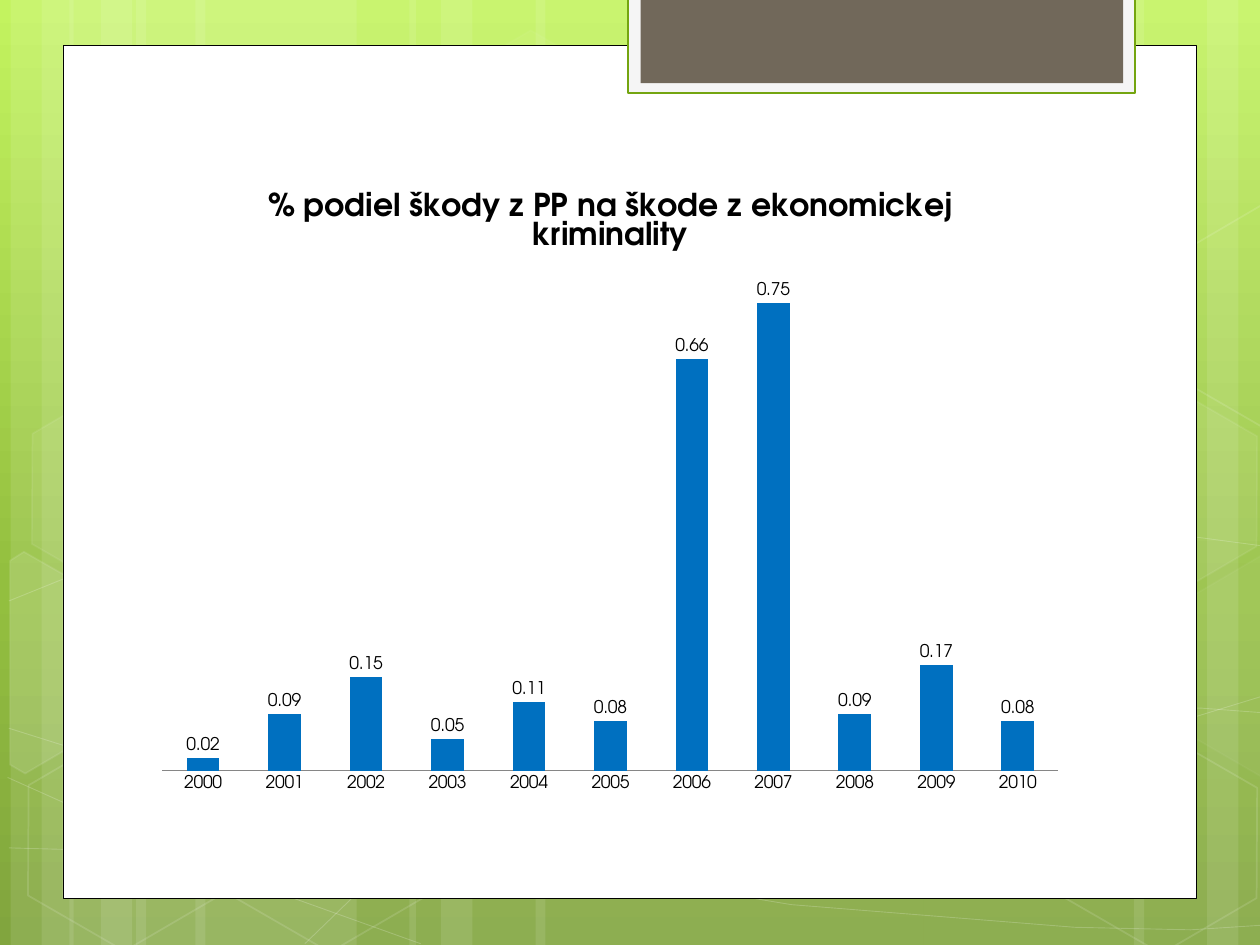
"""Build a slide with a column chart on a white panel over a green patterned background."""
from copy import deepcopy
from typing import NamedTuple, Optional

from lxml import etree
from pptx import Presentation, util as u
from pptx.chart.data import CategoryChartData
from pptx.dml.color import RGBColor
from pptx.enum import chart as charts, shapes
from pptx.oxml.ns import qn

COLUMNS, ROWS = 100, 75
FONT = "TeX Gyre Adventor"
WHITE, BLACK = "FFFFFF", "000000"


class Style(NamedTuple):
    """Fill and line of a shape, with opacities in percent."""
    fill: Optional[str] = None
    fill_opacity: int = 100
    line: Optional[str] = None
    line_width: float = 1
    line_opacity: int = 100


class Box(NamedTuple):
    """A rectangle in grid columns and rows."""
    left: float
    top: float
    width: float
    height: float


class Hexagon(NamedTuple):
    """Position and opacities of a tilted hexagon."""
    left: float
    top: float
    fill_opacity: int
    line_opacity: int


class Outline(NamedTuple):
    """A closed polygon and its fill opacity."""
    points: list
    fill_opacity: int


BANDS = [
    (10.8, 17.5), (0.85, 5), (3.3, 8.3), (15.5, 17.5), (5.5, 5), (8, 8.3),
    (73.3, 17.5), (95.8, 5), (90, 8.3), (42.5, 30.8), (32.5, 5), (35, 8.3),
]
CURVES = [
    [(0.7, 67.3), (19, 67.8), (45.8, 66.5), (79.2, 61.7), (100.7, 55.1)],
    [(0.7, 47.7), (12.1, 43.1), (34.7, 38.7), (65.4, 38.7), (100.7, 43.4)],
    [(0.6, 61.7), (16.9, 69), (33.4, 74.9)],
    [(0.7, 57.8), (12.8, 61.6), (35.7, 67.3), (62.8, 71.8), (85.3, 73.6), (94.5, 73.8),
     (100.7, 73.4)],
    [(24.2, 74.9), (30.2, 69.1), (38.8, 63.9), (47, 60.9), (60.8, 57.8), (68, 56.9),
     (79.4, 56.2), (95.3, 56.2), (100.6, 56.6)],
]
HEXAGONS = [
    Hexagon(33.4, 3.6, 4, 8), Hexagon(1.1, 59.1, 0, 12), Hexagon(1.4, 31.2, 7, 8),
    Hexagon(17.4, 59.2, 0, 12), Hexagon(83.4, 59.3, 0, 12), Hexagon(83.4, 31.4, 7, 8),
]
OUTLINES = [
    Outline([(0.8, 44.5), (1.9, 43.8), (9.6, 48.2), (9.5, 57), (2, 61.4), (0.8, 60.7)], 10),
    Outline([(92.6, 48.5), (100.1, 44.1), (100.9, 44.6), (100.9, 61.3), (100.2, 61.7),
             (92.6, 57.3)], 4),
    Outline([(92.6, 20.7), (100.1, 16.3), (101, 16.8), (100.9, 33.5), (100.2, 33.9),
             (92.6, 29.5)], 0),
]
PANELS = [
    (Box(5, 3.6, 90, 67.7), Style(WHITE, line=BLACK, line_width=0.5)),
    (Box(49.85, -0.2, 40.25, 7.6), Style("F5F5F5", line="74A510", line_width=1.25)),
    (Box(50.85, -0.2, 38.3, 6.8), Style("71685A")),
]
DAMAGE_SHARE = {
    "2000": 0.02, "2001": 0.09, "2002": 0.15, "2003": 0.05, "2004": 0.11, "2005": 0.08,
    "2006": 0.66, "2007": 0.75, "2008": 0.09, "2009": 0.17, "2010": 0.08,
}


def color(value: str) -> RGBColor:
    """Return the colour of a hex string."""
    return RGBColor.from_string(value)


def cells(amount: float) -> int:
    """Turn grid columns or rows, which are equally long, into a length."""
    return int(u.Inches(10) * amount / COLUMNS)


def set_opacity(fill, percent: int) -> None:
    """Make a solid fill partly transparent."""
    for node in fill._xPr.iter(qn("a:srgbClr")):
        etree.SubElement(node, qn("a:alpha"), val=str(percent * 1000))


def apply_style(shape, style: Style) -> None:
    """Set the line and fill of a shape and remove its shadow."""
    shape.shadow.inherit = False
    parts = ((shape.line.fill, style.line, style.line_opacity),
             (shape.fill, style.fill, style.fill_opacity))
    for fill, value, opacity in parts:
        if value is None or opacity == 0:
            fill.background()
            continue
        fill.solid()
        fill.fore_color.rgb = color(value)
        if opacity < 100:
            set_opacity(fill, opacity)
    if style.line:
        shape.line.width = u.Pt(style.line_width)


def add_box(slide, kind, box: Box, style: Style):
    """Add a preset shape on the grid."""
    shape = slide.shapes.add_shape(kind, *map(cells, box))
    apply_style(shape, style)
    return shape


def add_hexagon(slide, hexagon: Hexagon) -> None:
    """Add a hexagon standing on its point."""
    style = Style(WHITE, hexagon.fill_opacity, WHITE, 1, hexagon.line_opacity)
    shape = add_box(slide, shapes.MSO_SHAPE.HEXAGON,
                    Box(hexagon.left, hexagon.top, 17.5, 15.2), style)
    shape.adjustments[0] = 0.285
    shape.rotation = 30


def add_path(slide, points: list, close: bool, style: Style) -> None:
    """Add a freeform through grid points."""
    corners = [(cells(x), cells(y)) for x, y in points]
    builder = slide.shapes.build_freeform(*corners[0])
    builder.add_line_segments(corners[1:], close=close)
    apply_style(builder.convert_to_shape(), style)


def paint_background(slide) -> None:
    """Fill the background with a three-stop vertical gradient."""
    fill = slide.background.fill
    fill.gradient()
    fill.gradient_angle = 270
    first = next(slide.element.iter(qn("a:gs")))
    first.addnext(deepcopy(first))
    stops = ((0, "C3F35F"), (0.62, "93BF3F"), (1, "81A53E"))
    for stop, (position, value) in zip(fill.gradient_stops, stops):
        stop.position = position
        stop.color.rgb = color(value)


def place_plot(plot_area, box: Box) -> None:
    """Fix the inner plot area as shares of the chart."""
    for old in plot_area.findall(qn("c:layout")):
        plot_area.remove(old)
    layout = etree.Element(qn("c:layout"))
    manual = etree.SubElement(layout, qn("c:manualLayout"))
    settings = dict(layoutTarget="inner", xMode="edge", yMode="edge",
                    x=box.left, y=box.top, w=box.width, h=box.height)
    for name, value in settings.items():
        etree.SubElement(manual, qn(f"c:{name}"), val=str(value))
    plot_area.insert(0, layout)


def add_damage_chart(slide, box: Box) -> None:
    """Add the titled column chart."""
    data = CategoryChartData(number_format="0.00")
    data.categories = list(DAMAGE_SHARE)
    data.add_series("Series 1", list(DAMAGE_SHARE.values()))
    chart = slide.shapes.add_chart(charts.XL_CHART_TYPE.COLUMN_CLUSTERED,
                                   *map(cells, box), data).chart
    chart.font.name, chart.font.size = FONT, u.Pt(10)
    chart.font.color.rgb = color(BLACK)
    chart.has_legend = False
    title = chart.chart_title
    title.text_frame.text = "% podiel škody z PP na škode z ekonomickej kriminality"
    title.include_in_layout = False
    font = title.text_frame.paragraphs[0].runs[0].font
    font.name, font.size, font.bold = FONT, u.Pt(18), True
    font.color.rgb = color(BLACK)
    value_axis, category_axis = chart.value_axis, chart.category_axis
    value_axis.visible = value_axis.has_major_gridlines = False
    value_axis.minimum_scale, value_axis.maximum_scale = 0, 0.8
    category_axis.major_tick_mark = charts.XL_TICK_MARK.NONE
    category_axis.format.line.color.rgb = color("868686")
    category_axis.format.line.width = u.Pt(1)
    plot = chart.plots[0]
    plot.gap_width, plot.vary_by_categories = 150, False
    plot.series[0].format.fill.solid()
    plot.series[0].format.fill.fore_color.rgb = color("0070C0")
    plot.has_data_labels = True
    labels = plot.data_labels
    labels.show_value = True
    labels.number_format, labels.number_format_is_linked = "0.00", False
    labels.position = charts.XL_LABEL_POSITION.OUTSIDE_END
    place_plot(next(chart.element.iter(qn("c:plotArea"))), Box(0.02, 0.17, 0.96, 0.78))


def main() -> None:
    """Build and save the presentation."""
    presentation = Presentation()
    presentation.slide_width, presentation.slide_height = cells(COLUMNS), cells(ROWS)
    slide = presentation.slides.add_slide(presentation.slide_layouts[6])
    rectangle = shapes.MSO_SHAPE.RECTANGLE
    paint_background(slide)
    for left, width in BANDS:
        add_box(slide, rectangle, Box(left, 0, width, ROWS), Style(WHITE, 10))
    for points in CURVES:
        add_path(slide, points, False, Style(None, 0, WHITE, 0.5, 20))
    for hexagon in HEXAGONS:
        add_hexagon(slide, hexagon)
    for outline in OUTLINES:
        add_path(slide, outline.points, True, Style(WHITE, outline.fill_opacity, WHITE, 1, 12))
    for box, style in PANELS:
        add_box(slide, rectangle, box, style)
    add_damage_chart(slide, Box(11.4, 13, 74.1, 50.7))
    presentation.save("out.pptx")


if __name__ == "__main__":
    main()
